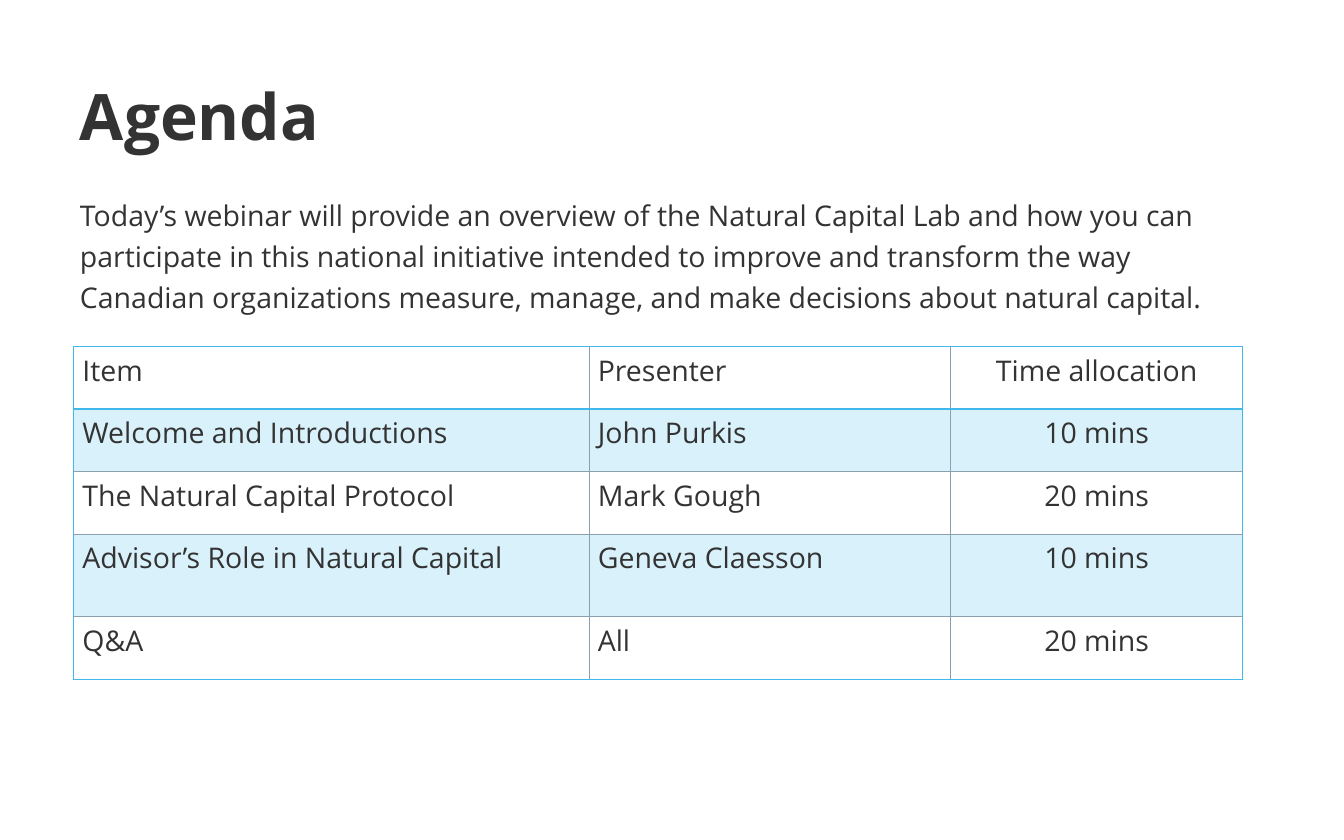
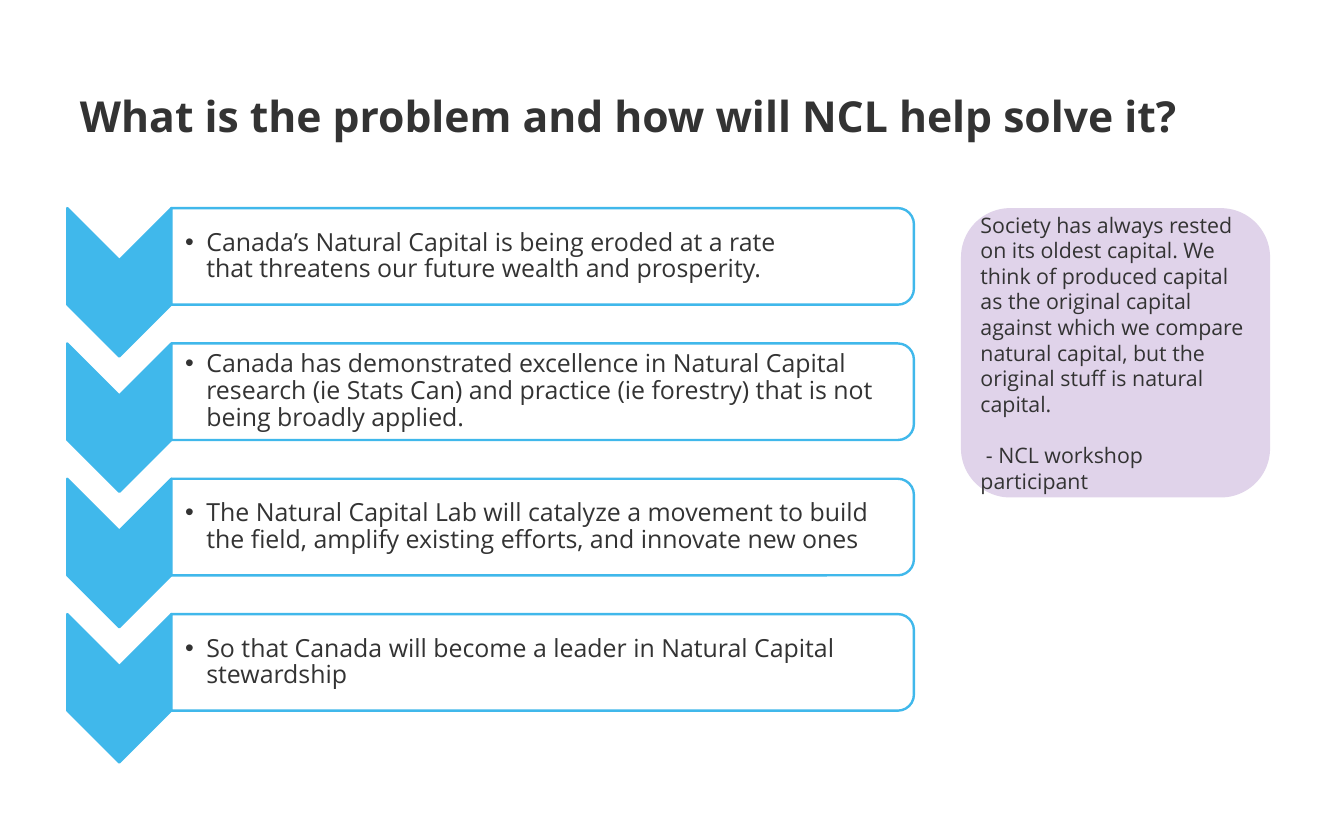
"""Build the agenda and problem slides of the Natural Capital Lab webinar."""
from lxml.etree import SubElement
from pptx import Presentation
from pptx.dml.color import RGBColor
from pptx.enum.shapes import MSO_SHAPE as Preset
from pptx.enum.text import MSO_ANCHOR as Anchor, MSO_AUTO_SIZE as AutoSize, PP_ALIGN as Align
from pptx.oxml.ns import qn
from pptx.util import Inches, Pt

INK = RGBColor(0x33, 0x33, 0x33)
BLUE = RGBColor(0x40, 0xB8, 0xEB)
PALE_BLUE = RGBColor(0xD9, 0xF1, 0xFB)
GREY = RGBColor(0x8A, 0xA0, 0xAC)
LILAC = RGBColor(0xE0, 0xD3, 0xEA)
WHITE = RGBColor(0xFF, 0xFF, 0xFF)

WIDTH, HEIGHT = Inches(15.75), Inches(9.84)
COLUMN, ROW = WIDTH / 20, HEIGHT / 18
TITLE_ONLY, TITLE_AND_BODY = 5, 1

TITLE_BOX = (1, 0.97, 18, 3)
BODY_BOX = (1, 3.97, 18, 4.9)
PLACEHOLDER_INSETS = (0.15, 0.07)
CELL_INSETS = (0.1, 0.05)

AGENDA = [
    ("Item", "Presenter", "Time allocation"),
    ("Welcome and Introductions", "John Purkis", "10 mins"),
    ("The Natural Capital Protocol", "Mark Gough", "20 mins"),
    ("Advisor’s Role in Natural Capital", "Geneva Claesson", "10 mins"),
    ("Q&A", "All", "20 mins"),
]
AGENDA_COLUMNS = (7.67, 5.38, 4.34)
AGENDA_ROWS = (1.34, 1.34, 1.34, 1.77, 1.34)

STEPS = [
    "Canada’s Natural Capital is being eroded at a rate\vthat threatens our future wealth and prosperity.",
    "Canada has demonstrated excellence in Natural Capital research (ie Stats Can) "
    "and practice (ie forestry) that is not being broadly applied.",
    "The Natural Capital Lab will catalyze a movement to build the field, "
    "amplify existing efforts, and innovate new ones",
    "So that Canada will become a leader in Natural Capital stewardship",
]
STEPS_TOP, STEP_PITCH = 4.46, 2.9


def assign(target, values):
    """Set every attribute named in a dict of format values."""
    for name, value in values.items():
        setattr(target, name, value)


class Deck:
    """Hold the shared style and the current slide."""

    font = {"name": "Open Sans", "bold": False}

    def __init__(self):
        """Start an empty presentation of the right size."""
        self.presentation = Presentation()
        assign(self.presentation, {"slide_width": WIDTH, "slide_height": HEIGHT})
        self.slide = None

    def box(self, left, top, width, height):
        """Turn grid columns and rows into lengths."""
        return [round(length) for length in (left * COLUMN, top * ROW, width * COLUMN, height * ROW)]

    def place(self, shape, box):
        """Move a shape to a box of the grid."""
        assign(shape, dict(zip(("left", "top", "width", "height"), self.box(*box))))

    def frame(self, shape, insets, anchor):
        """Format and return the text frame of a shape."""
        text_frame = shape.text_frame
        sides = ("margin_left", "margin_top", "margin_right", "margin_bottom")
        margins = insets if len(insets) == 4 else insets * 2
        assign(text_frame, {side: Inches(margin) for side, margin in zip(sides, margins)})
        assign(text_frame, {"word_wrap": True, "auto_size": AutoSize.NONE, "vertical_anchor": anchor})
        return text_frame

    def set_text(self, paragraph, text, size, bullet=None, bold=False, **layout):
        """Fill a paragraph with styled text."""
        paragraph.text = text
        properties = paragraph._p.get_or_add_pPr()
        indent = Inches(0.25) if bullet else 0
        properties.set("marL", str(indent))
        properties.set("indent", str(-indent))
        if bullet:
            SubElement(properties, qn("a:buFont"), typeface="Arial")
            SubElement(properties, qn("a:buChar"), char=bullet)
        else:
            SubElement(properties, qn("a:buNone"))
        assign(paragraph, {"alignment": Align.LEFT, "space_before": Pt(0), **layout})
        for run in paragraph.runs:
            assign(run.font, {**self.font, "size": Pt(size), "bold": bold})
            run.font.color.rgb = INK

    def add_slide(self, layout, title, size):
        """Add a slide with its title."""
        self.slide = self.presentation.slides.add_slide(self.presentation.slide_layouts[layout])
        shape = self.slide.shapes.title
        self.place(shape, TITLE_BOX)
        text_frame = self.frame(shape, PLACEHOLDER_INSETS, Anchor.MIDDLE)
        self.set_text(text_frame.paragraphs[0], title, size, bold=True)

    def body(self, text):
        """Fill the body placeholder."""
        shape = self.slide.placeholders[1]
        self.place(shape, BODY_BOX)
        text_frame = self.frame(shape, PLACEHOLDER_INSETS, Anchor.TOP)
        self.set_text(text_frame.paragraphs[0], text, 24, line_spacing=1.2)

    def shape(self, preset, box, fill, line=None, turned=False):
        """Add a preset shape, turned a quarter clockwise if asked."""
        left, top, width, height = self.box(*box)
        if turned:
            shift = (width - height) // 2
            left, top, width, height = left + shift, top - shift, height, width
        shape = self.slide.shapes.add_shape(preset, left, top, width, height)
        shape.shadow.inherit = False
        shape.rotation = 90 if turned else 0
        shape.fill.solid()
        shape.fill.fore_color.rgb = fill
        if line is None:
            shape.line.fill.background()
        else:
            shape.line.color.rgb = line
            shape.line.width = Pt(2)
        return shape

    def bullet(self, box, text):
        """Add a text box with one bulleted paragraph."""
        shape = self.slide.shapes.add_textbox(*self.box(*box))
        text_frame = self.frame(shape, (0.16, 0.01, 0.01, 0.01), Anchor.MIDDLE)
        self.set_text(text_frame.paragraphs[0], text, 21, bullet="•", line_spacing=0.9)

    def border(self, cell, side, color, points):
        """Draw one side of a table cell."""
        line = SubElement(cell._tc.get_or_add_tcPr(), qn(f"a:ln{side}"), w=str(Pt(points)))
        SubElement(SubElement(line, qn("a:solidFill")), qn("a:srgbClr"), val=str(color))

    def table(self, left, top, rows, widths, heights):
        """Add a table with banded body rows and a centred last column."""
        last_row, last_column = len(rows) - 1, len(widths) - 1
        box = self.box(left, top, sum(widths), sum(heights))
        table = self.slide.shapes.add_table(len(rows), len(widths), *box).table
        assign(table, {"first_row": False, "horz_banding": False})
        for column, width in zip(table.columns, widths):
            column.width = round(width * COLUMN)
        for row, height in zip(table.rows, heights):
            row.height = round(height * ROW)
        for r, texts in enumerate(rows):
            for c, text in enumerate(texts):
                cell = table.cell(r, c)
                horizontal, vertical = CELL_INSETS
                assign(cell, {"margin_left": Inches(horizontal), "margin_right": Inches(horizontal),
                              "margin_top": Inches(vertical), "margin_bottom": Inches(vertical)})
                self.border(cell, "L", BLUE if c == 0 else GREY, 1)
                self.border(cell, "R", BLUE if c == last_column else GREY, 1)
                self.border(cell, "T", BLUE if r <= 1 else GREY, 2 if r == 1 else 1)
                self.border(cell, "B", BLUE if r in (0, last_row) else GREY, 2 if r == 0 else 1)
                cell.fill.solid()
                cell.fill.fore_color.rgb = PALE_BLUE if r % 2 else WHITE
                alignment = Align.CENTER if c == last_column else Align.LEFT
                self.set_text(cell.text_frame.paragraphs[0], text, 24, alignment=alignment)

    def step(self, top, text):
        """Add a downward chevron with its panel and text."""
        self.shape(Preset.CHEVRON, (1, top, 1.55, 3.18), BLUE, BLUE, turned=True)
        self.shape(Preset.ROUND_2_SAME_RECTANGLE, (2.55, top, 11.05, 2.07), WHITE, BLUE, turned=True)
        self.bullet((2.55, top + 0.1, 10.98, 1.87), text)

    def quote(self, box, text, speaker):
        """Add a rounded quotation with its speaker."""
        shape = self.shape(Preset.ROUNDED_RECTANGLE, box, LILAC)
        shape.adjustments[0] = 0.17
        text_frame = self.frame(shape, (0.06, 0.03), Anchor.MIDDLE)
        self.set_text(text_frame.paragraphs[0], text, 18)
        self.set_text(text_frame.add_paragraph(), speaker, 18, space_before=Pt(22))


def main():
    """Build both slides and save them."""
    deck = Deck()

    deck.add_slide(TITLE_AND_BODY, "Agenda", 54)
    deck.body("Today’s webinar will provide an overview of the Natural Capital Lab and how you can "
              "participate in this national initiative intended to improve and transform the way\v"
              "Canadian organizations measure, manage, and make decisions about natural capital.")
    deck.table(1.1, 7.43, AGENDA, AGENDA_COLUMNS, AGENDA_ROWS)

    deck.add_slide(TITLE_ONLY, "What is the problem and how will NCL help solve it?", 36)
    for index, text in enumerate(STEPS):
        deck.step(STEPS_TOP + index * STEP_PITCH, text)
    deck.quote((14.3, STEPS_TOP, 4.6, 6.2),
               "Society has always rested on its oldest capital. We think of produced capital as the "
               "original capital against which we compare natural capital, but the original stuff is "
               "natural capital.",
               " - NCL workshop participant")

    deck.presentation.save("out.pptx")


if __name__ == "__main__":
    main()
